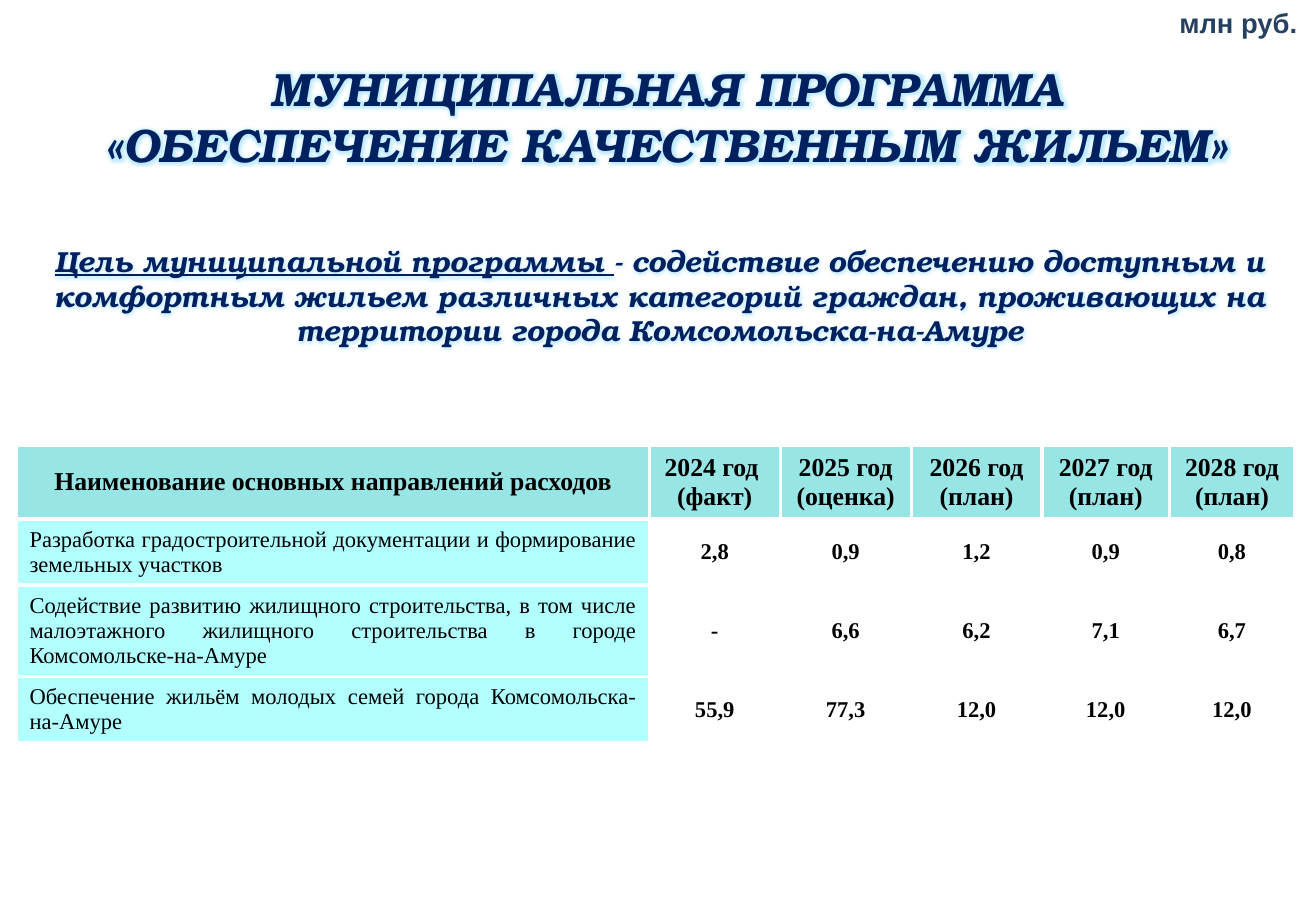
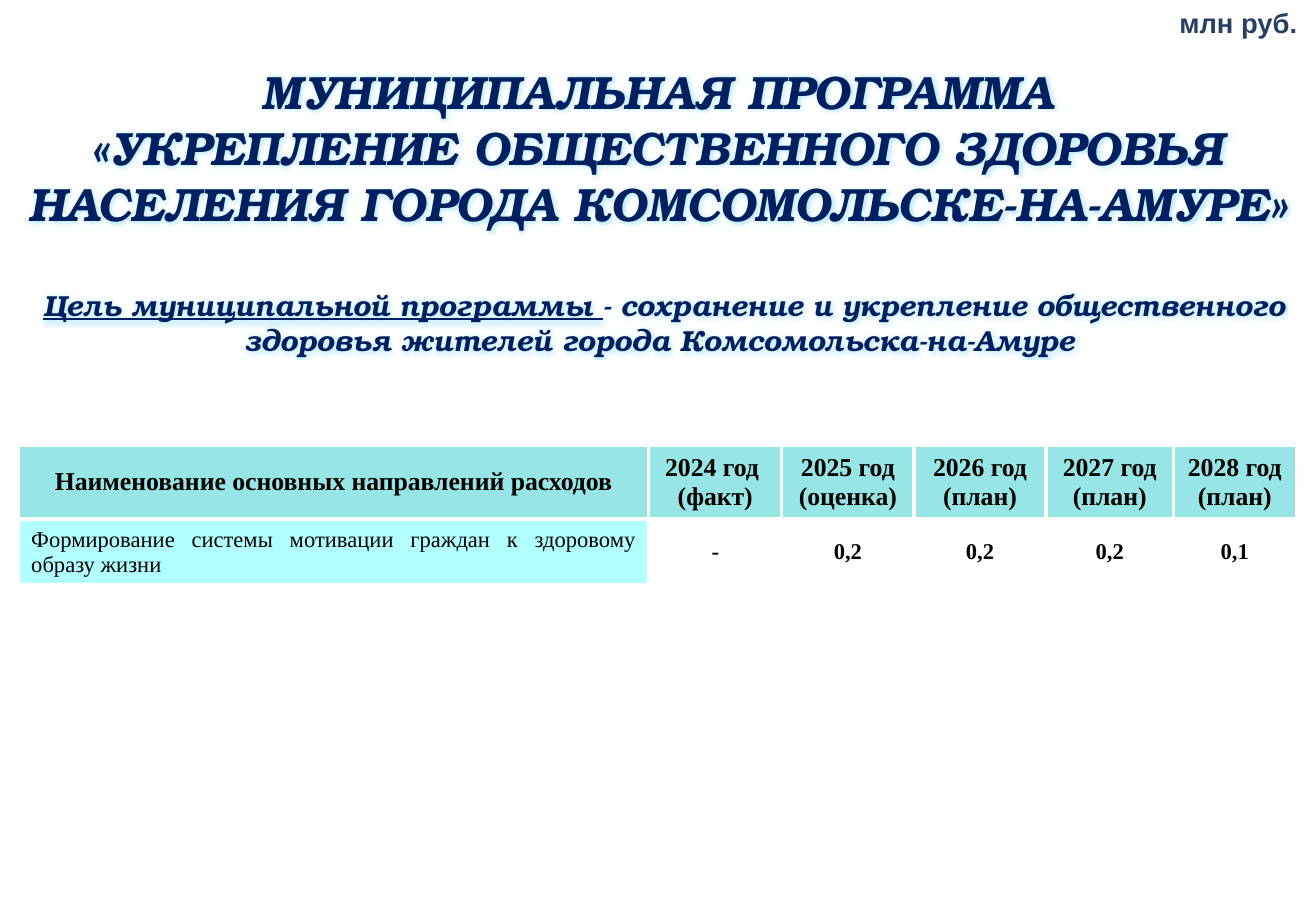
import dataclasses

import lxml.etree
import pptx
import pptx.dml.color
import pptx.enum.text
import pptx.oxml.ns
import pptx.util

ALIGN = pptx.enum.text.PP_ALIGN
ANCHOR = pptx.enum.text.MSO_ANCHOR
FIT = pptx.enum.text.MSO_AUTO_SIZE
TITLE_ONLY = 5


@dataclasses.dataclass(frozen=True)
class Style:
    size: float
    font: str
    color: str
    bold: bool = True
    italic: bool = False
    glow: bool = False


@dataclasses.dataclass(frozen=True)
class Theme:
    title: Style = Style(29, "TeX Gyre Bonum", "002060", italic=True, glow=True)
    goal: Style = Style(18, "TeX Gyre Bonum", "002060", italic=True, glow=True)
    unit: Style = Style(17, "Arial", "254061")
    header: Style = Style(16, "Times New Roman", "000000")
    name: Style = Style(14, "Times New Roman", "000000", bold=False)
    value: Style = Style(14, "Times New Roman", "000000")
    header_fill: str = "33CCCC"
    name_fill: str = "66FFFF"
    border: str = "FFFFFF"
    glow: str = "00B0F0"
    border_width: float = 2.25
    glow_radius: float = 4.5


THEME = Theme()
COLUMNS, ROWS = 113.6, 79.3  # the grid that covers a slide
UNIT_AREA = (100.6, -0.1, 12.8, 4.1)
TABLE_TOP = 38.45
HEADER_ROW = 6.3
HEADERS = ["Наименование основных направлений расходов", "2024 год \n(факт)",
           "2025 год\n(оценка)", "2026 год (план)", "2027 год (план)",
           "2028 год (план)"]
GOAL_LEAD = "Цель муниципальной программы "

PROGRAMMES = [
    dict(
        title="МУНИЦИПАЛЬНАЯ ПРОГРАММА\n«ОБЕСПЕЧЕНИЕ КАЧЕСТВЕННЫМ ЖИЛЬЕМ»",
        title_area=(3.2, 4.2, 108.7, 11.8),
        goal="- содействие обеспечению доступным и комфортным жильем различных "
             "категорий граждан, проживающих на территории города "
             "Комсомольска-на-Амуре",
        goal_area=(2.1, 20.5, 109.7, 10.1),
        table_left=1.45,
        widths=[54.6, 11.3, 11.3, 11.3, 11, 10.8],
        heights=[5.7, 7.9, 5.7],
        rows=[
            ["Разработка градостроительной документации и формирование "
             "земельных участков", "2,8", "0,9", "1,2", "0,9", "0,8"],
            ["Содействие развитию жилищного строительства, в том числе "
             "малоэтажного жилищного строительства в городе "
             "Комсомольске-на-Амуре", "-", "6,6", "6,2", "7,1", "6,7"],
            ["Обеспечение жильём молодых семей города Комсомольска-на-Амуре",
             "55,9", "77,3", "12,0", "12,0", "12,0"],
        ],
    ),
    dict(
        title="МУНИЦИПАЛЬНАЯ ПРОГРАММА\n«УКРЕПЛЕНИЕ ОБЩЕСТВЕННОГО ЗДОРОВЬЯ "
              "НАСЕЛЕНИЯ ГОРОДА КОМСОМОЛЬСКЕ-НА-АМУРЕ»",
        title_area=(0, 4.2, 113.6, 16.9),
        goal="- сохранение и укрепление общественного здоровья жителей города "
             "Комсомольска-на-Амуре ",
        goal_area=(2.5, 24.3, 109.7, 7.1),
        table_left=1.6,
        widths=[54.4, 11.5, 11.4, 11.4, 11, 10.6],
        heights=[5.7],
        rows=[["Формирование системы мотивации граждан к здоровому образу жизни",
               "-", "0,2", "0,2", "0,2", "0,1"]],
    ),
]


def grid(steps):
    return pptx.util.Inches(steps / 10)


def color(code):
    return pptx.dml.color.RGBColor.from_string(code)


def element(parent, tag, **attributes):
    return lxml.etree.SubElement(parent, pptx.oxml.ns.qn(tag), attributes)


def set_margins(target, across, down):
    target.margin_left = target.margin_right = pptx.util.Inches(across)
    target.margin_top = target.margin_bottom = pptx.util.Inches(down)


def add_glow(span):
    fill = span._r.get_or_add_rPr().find(pptx.oxml.ns.qn("a:solidFill"))
    effects = lxml.etree.Element(pptx.oxml.ns.qn("a:effectLst"))
    glow = element(effects, "a:glow", rad=str(pptx.util.Pt(THEME.glow_radius)))
    tint = element(glow, "a:srgbClr", val=THEME.glow)
    element(tint, "a:alpha", val="25000")
    fill.addnext(effects)


def format_text(frame, style, align):
    for para in frame.paragraphs:
        para.alignment = align
        for span in para.runs:
            span.font.size = pptx.util.Pt(style.size)
            span.font.name = style.font
            span.font.bold = style.bold
            span.font.italic = style.italic
            span.font.color.rgb = color(style.color)
            if style.glow:
                add_glow(span)


def add_title(page, text, area):
    title = page.shapes.title
    title.left, title.top, title.width, title.height = map(grid, area)
    frame = title.text_frame
    frame.text = text
    frame.word_wrap = True
    frame.auto_size = FIT.NONE
    frame.vertical_anchor = ANCHOR.BOTTOM
    set_margins(frame, 0.12, 0.12)
    format_text(frame, THEME.title, ALIGN.CENTER)


def add_unit(page):
    frame = page.shapes.add_textbox(*map(grid, UNIT_AREA)).text_frame
    frame.text = "млн руб."
    frame.word_wrap = False
    frame.auto_size = FIT.SHAPE_TO_FIT_TEXT
    set_margins(frame, 0.12, 0.06)
    format_text(frame, THEME.unit, ALIGN.LEFT)


def add_goal(page, text, area):
    frame = page.shapes.add_textbox(*map(grid, area)).text_frame
    frame.word_wrap = True
    frame.auto_size = FIT.SHAPE_TO_FIT_TEXT
    para = frame.paragraphs[0]
    for part in (GOAL_LEAD, text):
        span = para.add_run()
        span.text = part
        span.font.underline = part == GOAL_LEAD
    format_text(frame, THEME.goal, ALIGN.CENTER)


def fill_cell(cell, code):
    """Fill at half strength, or leave the cell clear when there is no colour."""
    if code is None:
        cell.fill.background()
        return
    cell.fill.solid()
    cell.fill.fore_color.rgb = color(code)
    properties = cell._tc.get_or_add_tcPr()
    for tint in properties.iter(pptx.oxml.ns.qn("a:srgbClr")):
        element(tint, "a:alpha", val="50000")


def add_borders(cell):
    properties = cell._tc.get_or_add_tcPr()
    for place, side in enumerate(("a:lnL", "a:lnR", "a:lnT", "a:lnB")):
        line = element(properties, side,
                       w=str(pptx.util.Pt(THEME.border_width)))
        element(element(line, "a:solidFill"), "a:srgbClr", val=THEME.border)
        properties.insert(place, line)


def write_cell(cell, text, style, align, fill):
    cell.text_frame.text = text
    cell.vertical_anchor = ANCHOR.MIDDLE
    set_margins(cell, 0.11, 0.07)
    format_text(cell.text_frame, style, align)
    fill_cell(cell, fill)
    add_borders(cell)


def add_spending(page, left, widths, heights, rows):
    lines = [HEADERS, *rows]
    heights = [HEADER_ROW, *heights]
    area = (left, TABLE_TOP, sum(widths), sum(heights))
    table = page.shapes.add_table(len(lines), len(widths),
                                  *map(grid, area)).table
    table.first_row = table.horz_banding = False
    for column, width in zip(table.columns, widths):
        column.width = grid(width)
    for row, height in zip(table.rows, heights):
        row.height = grid(height)
    for row, texts in enumerate(lines):
        for column, text in enumerate(texts):
            if row == 0:
                look = THEME.header, ALIGN.CENTER, THEME.header_fill
            elif column == 0:
                look = THEME.name, ALIGN.JUSTIFY, THEME.name_fill
            else:
                look = THEME.value, ALIGN.CENTER, None
            write_cell(table.cell(row, column), text, *look)


def add_programme(deck, programme):
    page = deck.slides.add_slide(deck.slide_layouts[TITLE_ONLY])
    add_title(page, programme["title"], programme["title_area"])
    add_spending(page, programme["table_left"], programme["widths"],
                 programme["heights"], programme["rows"])
    add_unit(page)
    add_goal(page, programme["goal"], programme["goal_area"])


def main():
    deck = pptx.Presentation()
    deck.slide_width, deck.slide_height = grid(COLUMNS), grid(ROWS)
    for programme in PROGRAMMES:
        add_programme(deck, programme)
    deck.save("out.pptx")


if __name__ == "__main__":
    main()
